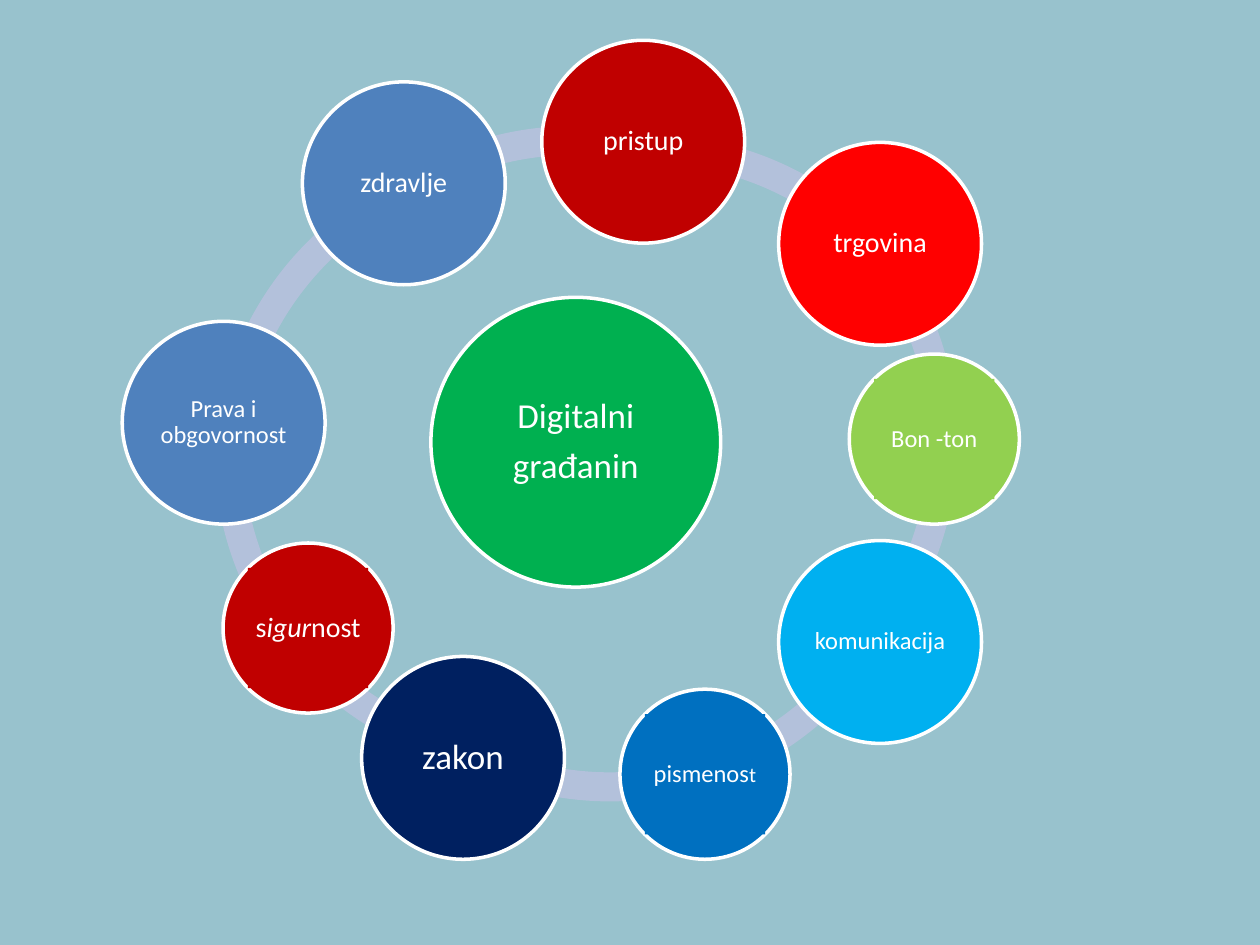
from math import sqrt

from pptx import Presentation
from pptx import util as u
from pptx.dml.color import RGBColor
from pptx.enum import shapes, text

KIND = shapes.MSO_SHAPE
ARCS = [
    (1.99, 1, 142.55, 169.74),
    (1.69, 1.17, 113.2, 147.25),
    (1.7, 1.02, 62.13, 111.21),
    (2.28, 1.24, 18.66, 70.62),
    (2.48, 0.95, 192.47, 23.53),
    (2.59, 1.07, 161.46, 190.37),
]
LARGE = [
    ("pristup", 4.3, 0.32, "C00000", 16),
    ("trgovina", 6.18, 1.13, "FF0000", 16),
    ("komunikacija", 6.18, 4.29, "00B0F0", 14),
    ("zakon", 2.87, 5.21, "002060", 20),
    ("Prava i obgovornost", 0.97, 2.55, "4F81BD", 14),
    ("zdravlje", 2.4, 0.65, "4F81BD", 16),
]
SMALL = [
    ([("pismenos", {}), ("t", {"size": 12})], 4.92, 5.47, "0070C0", 14),
    ([("s", {}), ("igur", {"italic": True}), ("nost", {})],
     1.77, 4.31, "C00000", 16),
    ([("Bon -ton", {})], 6.74, 2.81, "92D050", 14),
]


def paint(fill, color):
    """Fill with a solid hex colour."""
    fill.solid()
    fill.fore_color.rgb = RGBColor.from_string(color)


def form(slide, kind, left, top, side, color, line=None):
    """Add a square-framed shape without shadow."""
    shape = slide.shapes.add_shape(
        kind, u.Inches(left), u.Inches(top), u.Inches(side), u.Inches(side))
    shape.shadow.inherit = False
    paint(shape.fill, color)
    if line:
        paint(shape.line.fill, line)
        shape.line.width = u.Pt(2)
    else:
        shape.line.fill.background()
    return shape


def arc(slide, left, top, start, end):
    """Add one segment of the ring."""
    shape = form(slide, KIND.BLOCK_ARC, left, top, 5.12, "B3C1DB")
    for index, value in enumerate((start, end, 0.045)):
        shape.adjustments[index] = value


def write(para, words, size=16, italic=False, color="FFFFFF"):
    """Add a formatted run to a paragraph."""
    run = para.add_run()
    run.text = words
    font = run.font
    font.name, font.size, font.italic = "Calibri", u.Pt(size), italic
    paint(font.fill, color)


def disc(slide, paras, left, top, side, color, size, boxed=False):
    """Add a circle with its label in the inscribed square."""
    form(slide, KIND.OVAL, left, top, side, color, "FFFFFF")
    inner = side / sqrt(2)
    gap = (side - inner) / 2
    if boxed:
        box = form(slide, KIND.RECTANGLE, left + gap, top + gap, inner, color)
    else:
        box = slide.shapes.add_textbox(
            u.Inches(left + gap), u.Inches(top + gap),
            u.Inches(inner), u.Inches(inner))
    frame = box.text_frame
    frame.word_wrap = True
    frame.vertical_anchor = text.MSO_ANCHOR.MIDDLE
    pad = u.Inches(0.03 if size == 20 else 0.02)
    frame.margin_left = frame.margin_right = pad
    frame.margin_top = frame.margin_bottom = pad
    for index, runs in enumerate(paras):
        para = frame.add_paragraph() if index else frame.paragraphs[0]
        para.alignment = text.PP_ALIGN.CENTER
        para.line_spacing = 0.9
        para.space_after = u.Pt(0.35 * size)
        for words, style in runs:
            write(para, words, **{"size": size, **style})


def main():
    """Build the wheel of digital citizenship."""
    deck = Presentation()
    deck.slide_width, deck.slide_height = u.Inches(10), u.Inches(7.5)
    slide = deck.slides.add_slide(deck.slide_layouts[6])
    paint(slide.background.fill, "98C2CD")
    for spec_row in ARCS:
        arc(slide, *spec_row)
    hub = [[("Digitalni", {})], [("građanin", {})]]
    disc(slide, hub, 3.42, 2.36, 2.3, "00B050", 20)
    for words, left, top, color, size in LARGE:
        disc(slide, [[(words, {})]], left, top, 1.61, color, size)
    for runs, left, top, color, size in SMALL:
        disc(slide, [runs], left, top, 1.35, color, size, boxed=True)
    deck.save("out.pptx")


if __name__ == "__main__":
    main()
